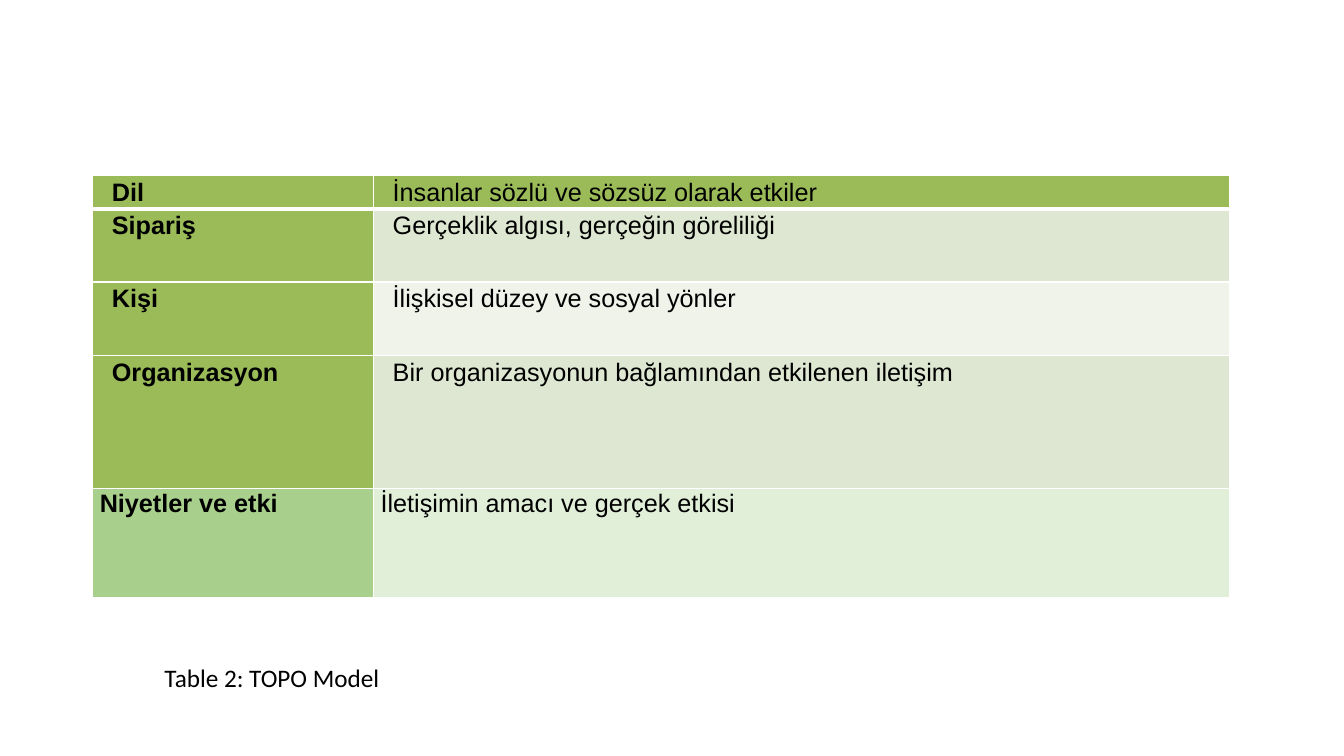
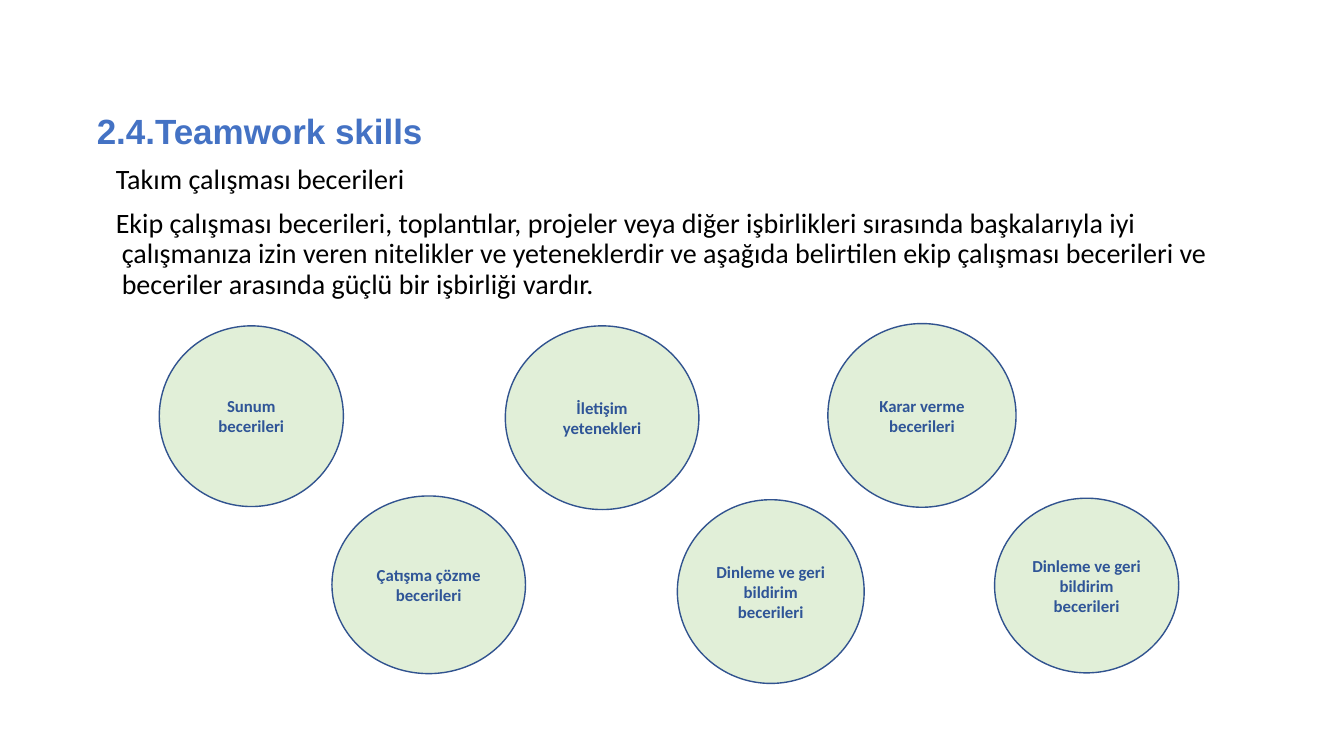
from dataclasses import dataclass

from lxml.etree import SubElement
from pptx import Presentation
from pptx.dml.color import RGBColor as Rgb
from pptx.enum.shapes import MSO_SHAPE as Shape
from pptx.enum.text import MSO_ANCHOR as Anchor, MSO_AUTO_SIZE as AutoSize, PP_ALIGN as Align
from pptx.oxml.ns import qn
from pptx.util import Inches, Pt


@dataclass(frozen=True)
class Theme:
    heading_font: str = "Arial"
    body_font: str = "Calibri"
    ink: str = "000000"
    white: str = "FFFFFF"
    heading: str = "4472C4"
    label: str = "2F5597"
    outline: str = "31538F"
    olive: str = "9BBB59"
    olive_soft: str = "DEE7D1"
    olive_pale: str = "EFF3EA"
    green: str = "A8D08C"
    green_pale: str = "E1EFD8"
    heading_size: int = 25
    body_size: int = 20
    table_size: int = 18
    label_size: int = 12


theme = Theme()
deck = Presentation()
deck.slide_width, deck.slide_height = Inches(13.33), Inches(7.5)
TITLE_ONLY, BLANK = deck.slide_layouts[5], deck.slide_layouts[6]


def area(left, top, width, height):
    """Turn percentages of the slide into left, top, width and height."""
    across, down = deck.slide_width / 100, deck.slide_height / 100
    return int(left * across), int(top * down), int(width * across), int(height * down)


def style(frame, font, size, color, bold=False, align=Align.LEFT, spacing=1.0):
    """Format every paragraph and run of a text frame."""
    for para in frame.paragraphs:
        para.alignment, para.line_spacing = align, spacing
        for span in para.runs:
            span.font.name, span.font.size, span.font.bold = font, Pt(size), bold
            span.font.color.rgb = Rgb.from_string(color)


# Slide 1: the model as two stacked tables
page = deck.slides.add_slide(BLANK)
TABLE_LEFT, TABLE_TOP = 6.9, 23.2
COLUMNS = (20.9, 63.7)
# Each row: height, name, description, name fill, description fill
main_rows = [
    (4.4, "Dil", "İnsanlar sözlü ve sözsüz olarak etkiler", theme.olive, theme.olive),
    (9.7, "Sipariş", "Gerçeklik algısı, gerçeğin göreliliği", theme.olive, theme.olive_soft),
    (9.7, "Kişi", "İlişkisel düzey ve sosyal yönler", theme.olive, theme.olive_pale),
    (17.6, "Organizasyon", "Bir organizasyonun bağlamından etkilenen iletişim",
     theme.olive, theme.olive_soft),
]
last_rows = [
    (14.5, "Niyetler ve etki", "İletişimin amacı ve gerçek etkisi", theme.green, theme.green_pale),
]

top = TABLE_TOP
for rows, side_margin, top_margin, header_rule in (
    (main_rows, 0.19, 0.03, 3),
    (last_rows, 0.07, 0.01, 1),
):
    total = sum(row[0] for row in rows)
    table = page.shapes.add_table(
        len(rows), len(COLUMNS), *area(TABLE_LEFT, top, sum(COLUMNS), total)).table
    table.first_row = table.horz_banding = False
    for column, share in zip(table.columns, COLUMNS):
        column.width = area(0, 0, share, 0)[2]
    for index, (height, name, description, *fills) in enumerate(rows):
        table.rows[index].height = area(0, 0, 0, height)[3]
        rules = {"lnL": 1, "lnR": 1,
                 "lnT": header_rule if index == 1 else 1,
                 "lnB": header_rule if index == 0 else 1}
        for column, text in enumerate((name, description)):
            cell = table.cell(index, column)
            cell.text_frame.text = text
            style(cell.text_frame, theme.heading_font, theme.table_size, theme.ink,
                  bold=column == 0)
            cell.margin_left = cell.margin_right = Inches(side_margin)
            cell.margin_top, cell.margin_bottom = Inches(top_margin), 0
            properties = cell._tc.get_or_add_tcPr()
            for tag, points in rules.items():
                rule = SubElement(properties, qn(f"a:{tag}"), w=str(Pt(points)))
                paint = SubElement(rule, qn("a:solidFill"))
                SubElement(paint, qn("a:srgbClr"), val=theme.white)
            cell.fill.solid()
            cell.fill.fore_color.rgb = Rgb.from_string(fills[column])
    top += total

caption = page.shapes.add_textbox(*area(11.5, 86.9, 68.6, 5.3)).text_frame
caption.word_wrap = True
caption.text = "Table 2: TOPO Model"
style(caption, theme.body_font, theme.table_size, theme.ink)

# Slide 2: heading, introduction and the skills in circles
page = deck.slides.add_slide(TITLE_ONLY)
title = page.shapes.title
title.left, title.top, title.width, title.height = area(6.45, 14.5, 86.3, 6.2)
title.text_frame.text = "2.4.Teamwork skills"
title.text_frame.vertical_anchor = Anchor.TOP
title.text_frame.auto_size = AutoSize.NONE
style(title.text_frame, theme.heading_font, theme.heading_size, theme.heading,
      bold=True, spacing=0.9)

intro = page.shapes.add_textbox(*area(6.45, 21.2, 86.3, 19.3)).text_frame
intro.word_wrap = True
intro.text = (
    "Takım çalışması becerileri\n"
    "Ekip çalışması becerileri, toplantılar, projeler veya diğer işbirlikleri sırasında "
    "başkalarıyla iyi çalışmanıza izin veren nitelikler ve yeteneklerdir ve aşağıda "
    "belirtilen ekip çalışması becerileri ve beceriler arasında güçlü bir işbirliği vardır."
)
style(intro, theme.body_font, theme.body_size, theme.ink, spacing=0.9)
for para in intro.paragraphs:
    indents = para._p.get_or_add_pPr()
    indents.set("marL", str(Inches(0.25)))
    indents.set("indent", str(Inches(-0.06)))
intro.paragraphs[1].space_before = Pt(10)

skills = [
    ("Sunum becerileri", 11.85, 43.1, 13.7, 23.9),
    ("İletişim yetenekleri", 37.6, 43.1, 14.4, 24.3),
    ("Karar verme becerileri", 61.6, 42.8, 14, 24.3),
    ("Çatışma çözme becerileri", 24.7, 65.6, 14.4, 23.5),
    ("Dinleme ve geri bildirim becerileri", 50.4, 66.1, 13.9, 24.3),
    ("Dinleme ve geri bildirim becerileri", 74, 65.9, 13.7, 23.1),
]
for skill, *place in skills:
    circle = page.shapes.add_shape(Shape.OVAL, *area(*place))
    circle.shadow.inherit = False
    circle.fill.solid()
    circle.fill.fore_color.rgb = Rgb.from_string(theme.green_pale)
    circle.line.color.rgb = Rgb.from_string(theme.outline)
    circle.line.width = Pt(1)
    circle.text_frame.text = skill
    circle.text_frame.word_wrap = True
    circle.text_frame.vertical_anchor = Anchor.MIDDLE
    style(circle.text_frame, theme.body_font, theme.label_size, theme.label,
          bold=True, align=Align.CENTER)

deck.save("out.pptx")
